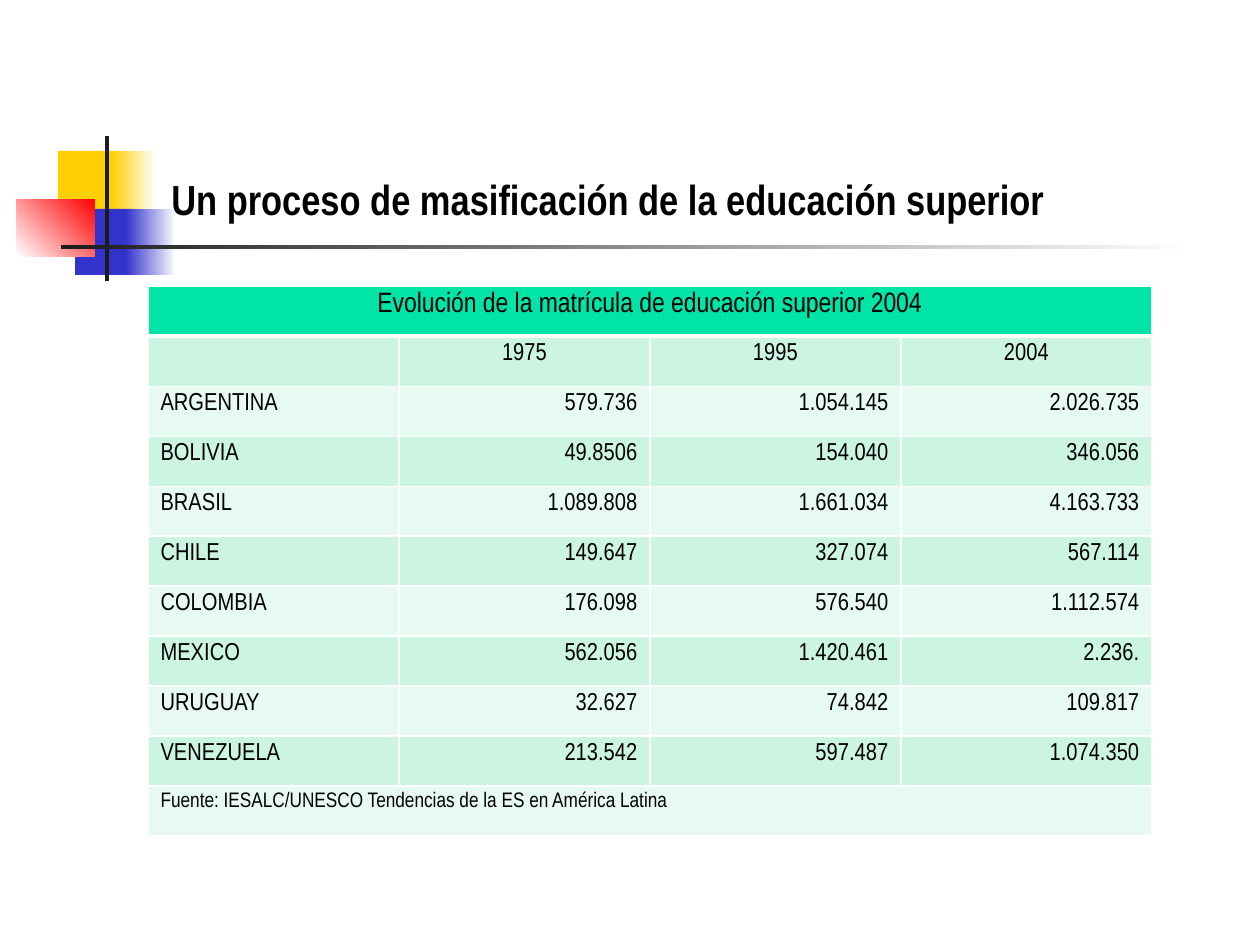
from dataclasses import dataclass
from typing import Optional

from lxml import etree
from pptx import Presentation
from pptx.dml.color import RGBColor
from pptx.enum.shapes import MSO_SHAPE
from pptx.enum.text import MSO_ANCHOR, PP_ALIGN
from pptx.oxml.ns import qn
from pptx.util import Emu, Pt

RECT = MSO_SHAPE.RECTANGLE
LEFT, CENTER, RIGHT = PP_ALIGN.LEFT, PP_ALIGN.CENTER, PP_ALIGN.RIGHT
BOTTOM = MSO_ANCHOR.BOTTOM
PX = 914400 / 126


@dataclass(frozen=True)
class Theme:
    font: str = "Arial Narrow"
    text: str = "000000"
    white: str = "FFFFFF"
    yellow: str = "FFCF01"
    blue: str = "3333CC"
    red: str = "FF0000"
    dark: str = "1C1C1C"
    header: str = "00E4A8"
    bands: tuple[str, str] = ("E7FAF1", "CCF5E1")
    title_pt: int = 24
    caption_pt: int = 16
    body_pt: int = 14
    source_pt: int = 12


@dataclass(frozen=True)
class Block:
    x: int
    y: int
    w: int
    h: int
    color: str
    fade_to: Optional[str] = None
    angle: int = 0


T = Theme()

BLOCKS = [
    Block(58, 151, 60, 66, T.yellow),
    Block(111, 151, 45, 66, T.yellow, T.white),
    Block(75, 209, 58, 66, T.blue),
    Block(126, 209, 50, 66, T.blue, T.white),
    Block(17, 199, 78, 58, T.white, T.red, 45),
    Block(105, 136, 4, 145, T.dark),
    Block(61, 245, 1134, 4, T.dark, T.white),
]

TITLE = "Un proceso de masificación de la educación superior"
CAPTION = "Evolución de la matrícula de educación superior 2004"
SOURCE = "Fuente: IESALC/UNESCO Tendencias de la ES en América Latina"
YEARS = ("", "1975", "1995", "2004")
ENROLMENT = [
    ("ARGENTINA", "579.736", "1.054.145", "2.026.735"),
    ("BOLIVIA", "49.8506", "154.040", "346.056"),
    ("BRASIL", "1.089.808", "1.661.034", "4.163.733"),
    ("CHILE", "149.647", "327.074", "567.114"),
    ("COLOMBIA", "176.098", "576.540", "1.112.574"),
    ("MEXICO", "562.056", "1.420.461", "2.236."),
    ("URUGUAY", "32.627", "74.842", "109.817"),
    ("VENEZUELA", "213.542", "597.487", "1.074.350"),
]
TABLE_X, TABLE_Y, COL_W, ROW_H = 148, 286, 251, 50


def px(n: int) -> Emu:
    return Emu(round(n * PX))


def rgb(color: str) -> RGBColor:
    return RGBColor.from_string(color)


def put_text(tf, text: str, *, size: int, bold: bool = False, align=LEFT) -> None:
    p = tf.paragraphs[0]
    p.alignment = align
    if not text:
        return
    r = p.add_run()
    r.text = text
    r.font.name = T.font
    r.font.size = Pt(size)
    r.font.bold = bold
    r.font.color.rgb = rgb(T.text)


def add_block(s, b: Block) -> None:
    sp = s.shapes.add_shape(RECT, px(b.x), px(b.y), px(b.w), px(b.h))
    sp.shadow.inherit = False
    sp.line.fill.background()
    if b.fade_to is None:
        sp.fill.solid()
        sp.fill.fore_color.rgb = rgb(b.color)
        return
    sp.fill.gradient()
    sp.fill.gradient_angle = b.angle
    for stop, color, position in zip(sp.fill.gradient_stops, (b.color, b.fade_to), (0, 1)):
        stop.color.rgb = rgb(color)
        stop.position = position


def add_title(s) -> None:
    tf = s.shapes.add_textbox(px(159), px(108), px(1074), px(122)).text_frame
    tf.word_wrap = True
    tf.vertical_anchor = BOTTOM
    put_text(tf, TITLE, size=T.title_pt, bold=True)


def style_cell(cell, fill: str, top: int = 1, bottom: int = 1) -> None:
    """Set the fill and the white borders, with top and bottom widths in points."""
    tc_pr = cell._tc.get_or_add_tcPr()
    for side, width in (("L", 1), ("R", 1), ("T", top), ("B", bottom)):
        ln = etree.SubElement(tc_pr, qn(f"a:ln{side}"), w=str(Pt(width)))
        solid = etree.SubElement(ln, qn("a:solidFill"))
        etree.SubElement(solid, qn("a:srgbClr"), val=T.white)
    cell.fill.solid()
    cell.fill.fore_color.rgb = rgb(fill)


def add_enrolment_table(s) -> None:
    rows = [(CAPTION,), YEARS, *ENROLMENT, (SOURCE,)]
    n_rows, n_cols, last = len(rows), len(YEARS), len(rows) - 1
    table = s.shapes.add_table(n_rows, n_cols, px(TABLE_X), px(TABLE_Y),
                               px(n_cols * COL_W), px(n_rows * ROW_H)).table
    for col in table.columns:
        col.width = px(COL_W)
    for i, values in enumerate(rows):
        table.rows[i].height = px(ROW_H)
        fill = T.header if i == 0 else T.bands[i % 2]
        if i in (1, last):
            fill = T.bands[1] if i == 1 else T.bands[0]
        elif i > 1:
            fill = T.bands[i % 2]
        for j in range(n_cols):
            style_cell(table.cell(i, j), fill, top=3 if i == 1 else 1, bottom=3 if i == 0 else 1)
        if len(values) == 1:
            table.cell(i, 0).merge(table.cell(i, n_cols - 1))
        size = {0: T.caption_pt, last: T.source_pt}.get(i, T.body_pt)
        for j, value in enumerate(values):
            align = CENTER if i < 2 else RIGHT if j else LEFT
            put_text(table.cell(i, j).text_frame, value, size=size, align=align)


def main() -> None:
    prs = Presentation()
    prs.slide_width, prs.slide_height = px(1260), px(945)
    s = prs.slides.add_slide(prs.slide_layouts[6])
    for block in BLOCKS:
        add_block(s, block)
    add_title(s)
    add_enrolment_table(s)
    prs.save("out.pptx")


if __name__ == "__main__":
    main()
